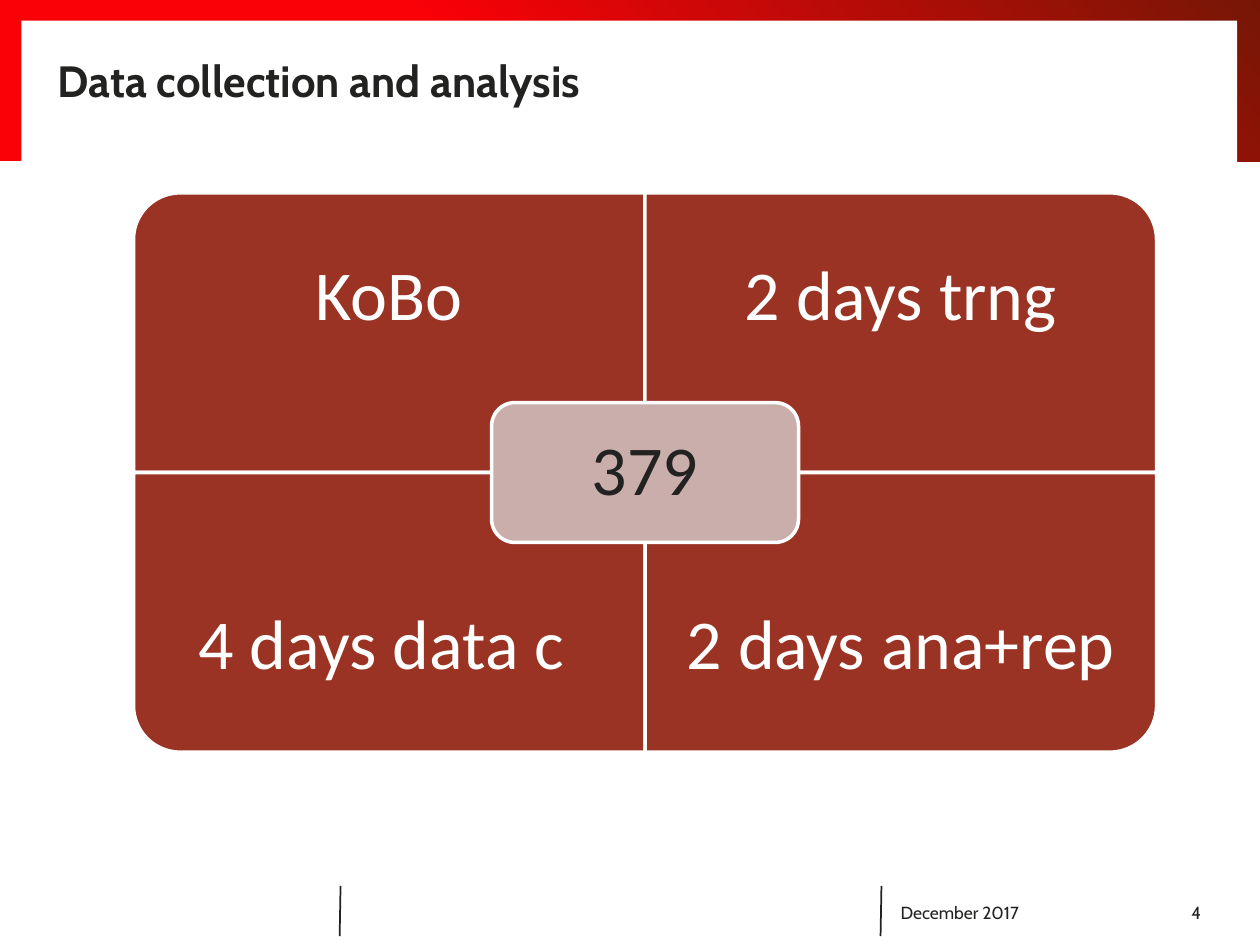
"""Build the slide on data collection and analysis."""
from lxml import etree
from pptx import Presentation
from pptx.dml.color import RGBColor
from pptx.enum.shapes import MSO_CONNECTOR, MSO_SHAPE
from pptx.enum.text import MSO_ANCHOR, PP_ALIGN
from pptx.oxml.ns import qn
from pptx.util import Pt

RECT, ROUNDED = MSO_SHAPE.RECTANGLE, MSO_SHAPE.ROUNDED_RECTANGLE
ONE_ROUND = MSO_SHAPE.ROUND_1_RECTANGLE
STRAIGHT = MSO_CONNECTOR.STRAIGHT
MIDDLE = MSO_ANCHOR.MIDDLE
LEFT, CENTER, RIGHT = PP_ALIGN.LEFT, PP_ALIGN.CENTER, PP_ALIGN.RIGHT
INK, WHITE, BRICK, ROSE = "222221", "FFFFFF", "9A3324", "CAAEAC"

color = RGBColor.from_string


def write(holder, text, size=10, font="Cabin", ink=INK, bold=False,
          align=LEFT, inset=(7.2, 3.6), spacing=None):
    """Put one formatted paragraph into a shape or text box."""
    frame = holder.text_frame
    frame.word_wrap = True
    frame.vertical_anchor = MIDDLE
    frame.margin_left = frame.margin_right = Pt(inset[0])
    frame.margin_top = frame.margin_bottom = Pt(inset[1])
    paragraph = frame.paragraphs[0]
    paragraph.alignment = align
    paragraph.line_spacing = spacing
    run = paragraph.add_run()
    run.text = text
    run.font.size = Pt(size)
    run.font.name = font
    run.font.bold = bold
    run.font.color.rgb = color(ink)


def add_panel(kind, left, top, width, height, fill, outlined=True):
    """Add a filled preset shape, with a white outline if wanted."""
    panel = shapes.add_shape(kind, Pt(left), Pt(top), Pt(width), Pt(height))
    panel.shadow.inherit = False
    panel.fill.solid()
    panel.fill.fore_color.rgb = color(fill)
    if outlined:
        panel.line.color.rgb = color(WHITE)
        panel.line.width = Pt(2)
    else:
        panel.line.fill.background()
    return panel


deck = Presentation()
deck.slide_width, deck.slide_height = Pt(720), Pt(540)
slide = deck.slides.add_slide(deck.slide_layouts[6])
shapes = slide.shapes

banner = add_panel(RECT, 0, 0, 720, 92.2, "FA0007", outlined=False)
banner.fill.gradient()
banner.fill.gradient_angle = 45
for stop, (position, shade) in zip(banner.fill.gradient_stops,
                                   [(0.4, "FA0007"), (1, "761706")]):
    stop.position = position
    stop.color.rgb = color(shade)
add_panel(RECT, 12.2, 11.8, 694.8, 85, WHITE, outlined=False)

for divider_x in (194.6, 503.7):
    divider = shapes.add_connector(STRAIGHT, Pt(divider_x), Pt(506.2),
                                   Pt(divider_x - 0.5), Pt(535))
    divider.line.color.rgb = color(INK)
    divider.line.width = Pt(1)
    etree.SubElement(divider.line._get_or_add_ln().getparent(), qn("a:effectLst"))

page_number = shapes.add_textbox(Pt(632.2), Pt(506.9), Pt(61.2), Pt(28.8))
write(page_number, "4", align=RIGHT)
date = shapes.add_textbox(Pt(507.6), Pt(506.9), Pt(124.6), Pt(28.8))
write(date, "December 2017")
title = shapes.add_textbox(Pt(33.1), Pt(25.9), Pt(652.3), Pt(39.6))
write(title, "Data collection and analysis", size=25, bold=True, inset=(0, 0))

center_x, center_y = 368.6, 270
quad_width, quad_height = 292.3, 159.8
label_height = quad_height * 0.75
body = {"size": 40, "font": "Calibri", "align": CENTER, "spacing": 0.9}

quadrants = [("KoBo", 0, 0, 270), ("2 days trng", 1, 0, 0),
             ("4 days data c ", 0, 1, 180), ("2 days ana+rep", 1, 1, 90)]
for text, column, row, rotation in quadrants:
    left = center_x + (column - 1) * quad_width
    top = center_y + (row - 1) * quad_height
    width, height = quad_width, quad_height
    if rotation in (90, 270):
        width, height = height, width
    quadrant = add_panel(ONE_ROUND, left + (quad_width - width) / 2,
                         top + (quad_height - height) / 2, width, height, BRICK)
    quadrant.rotation = rotation
    label_top = top + row * (quad_height - label_height)
    label = shapes.add_textbox(Pt(left), Pt(label_top), Pt(quad_width), Pt(label_height))
    write(label, text, ink=WHITE, inset=(22.3, 22.3), **body)

hub_width, hub_height = quad_width * 0.6, quad_height / 2
hub = add_panel(ROUNDED, center_x - hub_width / 2, center_y - hub_height / 2,
                hub_width, hub_height, ROSE)
write(hub, "379", inset=(12, 12), **body)

deck.save("out.pptx")
